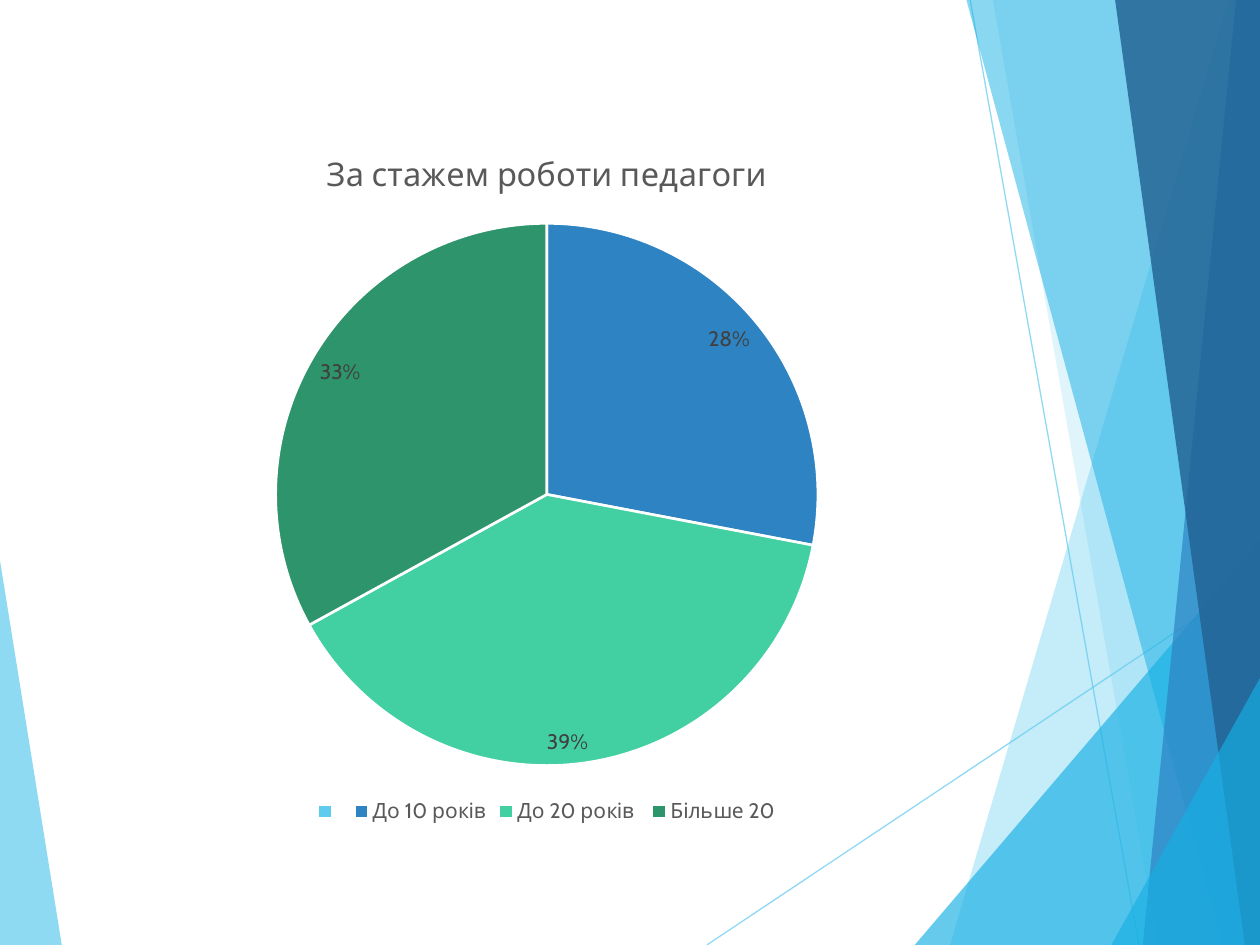
from dataclasses import dataclass

from lxml import etree
from pptx import Presentation
from pptx import util as u
from pptx.chart.data import CategoryChartData
from pptx.dml.color import RGBColor
from pptx.enum import chart as charts
from pptx.enum import shapes
from pptx.oxml.ns import qn


@dataclass(frozen=True)
class Theme:
    sky: str = "5FCBEF"
    cyan: str = "17B0E4"
    blue: str = "2E83C3"
    navy: str = "226292"
    mint: str = "42D0A2"
    green: str = "2E946B"
    white: str = "FFFFFF"
    text: str = "595959"
    label: str = "404040"
    font: str = "Cabin"
    title_size: float = 18.6
    body_size: float = 12


THEME = Theme()
WIDTH, HEIGHT = 10, 7.5

# Corner points in inches, colour, opacity in percent
LEFT_FACET = ([(0, 4.45), (0.49, HEIGHT), (0, HEIGHT)], THEME.sky, 70)
RIGHT_FACETS = [
    ([(9.75, 0), (7.54, HEIGHT), (WIDTH, HEIGHT), (WIDTH, 0)], THEME.sky, 36),
    ([(7.88, 0), (9.19, HEIGHT), (WIDTH, HEIGHT), (WIDTH, 0)], THEME.sky, 20),
    ([(7.26, HEIGHT), (WIDTH, 4.29), (WIDTH, HEIGHT)], THEME.cyan, 66),
    ([(7.67, 0), (9.7, HEIGHT), (WIDTH, HEIGHT), (WIDTH, 0)], THEME.cyan, 50),
    ([(9.81, 0), (9.07, HEIGHT), (WIDTH, HEIGHT), (WIDTH, 0)], THEME.blue, 70),
    ([(8.85, 0), (9.88, HEIGHT), (WIDTH, HEIGHT), (WIDTH, 0)], THEME.navy, 82),
    ([(8.82, HEIGHT), (WIDTH, 5.38), (WIDTH, HEIGHT)], THEME.cyan, 66),
]
RAYS = [((5.61, HEIGHT), (WIDTH, 4.57)), ((7.7, 0), (9.04, HEIGHT))]

SLICES = [
    ("", None, THEME.sky),
    ("До 10 років", 28, THEME.blue),
    ("До 20 років ", 39, THEME.mint),
    ("Більше 20", 33, THEME.green),
]


def rgb(value):
    return RGBColor.from_string(value)


def set_opacity(fill_parent, percent):
    colour = next(fill_parent.iter(qn("a:srgbClr")))
    etree.SubElement(colour, qn("a:alpha")).set("val", str(percent * 1000))


def style_font(font, size, colour):
    font.name = THEME.font
    font.size = u.Pt(size)
    font.bold = False
    font.color.rgb = rgb(colour)


def add_facet(slide, corners, colour, opacity):
    points = [(u.Inches(x), u.Inches(y)) for x, y in corners]
    builder = slide.shapes.build_freeform(*points[0], scale=1.0)
    builder.add_line_segments(points[1:], close=True)
    facet = builder.convert_to_shape()
    facet.shadow.inherit = False
    facet.fill.solid()
    facet.fill.fore_color.rgb = rgb(colour)
    facet.line.fill.background()
    set_opacity(facet.fill._xPr, opacity)


def add_ray(slide, start, end):
    ray = slide.shapes.add_connector(
        shapes.MSO_CONNECTOR.STRAIGHT, *(u.Inches(value) for value in start + end))
    ray.line.color.rgb = rgb(THEME.sky)
    ray.line.width = u.Pt(0.75)
    properties = ray._element.spPr
    set_opacity(properties, 70)
    etree.SubElement(properties, qn("a:effectLst"))


def add_backdrop(slide):
    add_facet(slide, *LEFT_FACET)
    for start, end in RAYS:
        add_ray(slide, start, end)
    for facet in RIGHT_FACETS:
        add_facet(slide, *facet)


def set_plot_area(chart, x, y, width, height):
    """Place the plot area by fractions of the chart's box."""
    plot_area = chart._chartSpace.chart.plotArea
    for old in plot_area.findall(qn("c:layout")):
        plot_area.remove(old)
    layout = etree.Element(qn("c:layout"))
    manual = etree.SubElement(layout, qn("c:manualLayout"))
    settings = [("layoutTarget", "inner"), ("xMode", "edge"), ("yMode", "edge"),
                ("x", x), ("y", y), ("w", width), ("h", height)]
    for name, value in settings:
        etree.SubElement(manual, qn("c:" + name)).set("val", str(value))
    plot_area.insert(0, layout)


def add_experience_chart(slide, left, top, width, height):
    data = CategoryChartData()
    data.categories = [name for name, _, _ in SLICES]
    data.add_series("Series 1", [value for _, value, _ in SLICES])
    chart = slide.shapes.add_chart(
        charts.XL_CHART_TYPE.PIE, left, top, width, height, data).chart
    style_font(chart.font, THEME.body_size, THEME.text)

    chart.has_title = True
    title = chart.chart_title.text_frame
    title.text = "За стажем роботи педагоги"
    style_font(title.paragraphs[0].runs[0].font, THEME.title_size, THEME.text)
    chart.chart_title.include_in_layout = False

    chart.has_legend = True
    chart.legend.position = charts.XL_LEGEND_POSITION.BOTTOM
    chart.legend.include_in_layout = False
    style_font(chart.legend.font, THEME.body_size, THEME.text)

    plot = chart.plots[0]
    plot.vary_by_categories = True
    plot.has_data_labels = True
    labels = plot.data_labels
    labels.show_percentage = True
    labels.show_value = False
    labels.number_format = "0%"
    labels.number_format_is_linked = False
    labels.position = charts.XL_LABEL_POSITION.INSIDE_END
    style_font(labels.font, THEME.body_size, THEME.label)

    for index, (_, _, colour) in enumerate(SLICES):
        slice_format = plot.series[0].points[index].format
        slice_format.fill.solid()
        slice_format.fill.fore_color.rgb = rgb(colour)
        slice_format.line.color.rgb = rgb(THEME.white)
        slice_format.line.width = u.Pt(1.5)
    set_plot_area(chart, 0.23, 0.14, 0.54, 0.77)


def main():
    presentation = Presentation()
    presentation.slide_width = u.Inches(WIDTH)
    presentation.slide_height = u.Inches(HEIGHT)
    slide = presentation.slides.add_slide(presentation.slide_layouts[6])
    add_backdrop(slide)
    add_experience_chart(
        slide, u.Inches(0.35), u.Inches(0.99), u.Inches(7.98), u.Inches(5.59))
    presentation.save("out.pptx")


if __name__ == "__main__":
    main()
